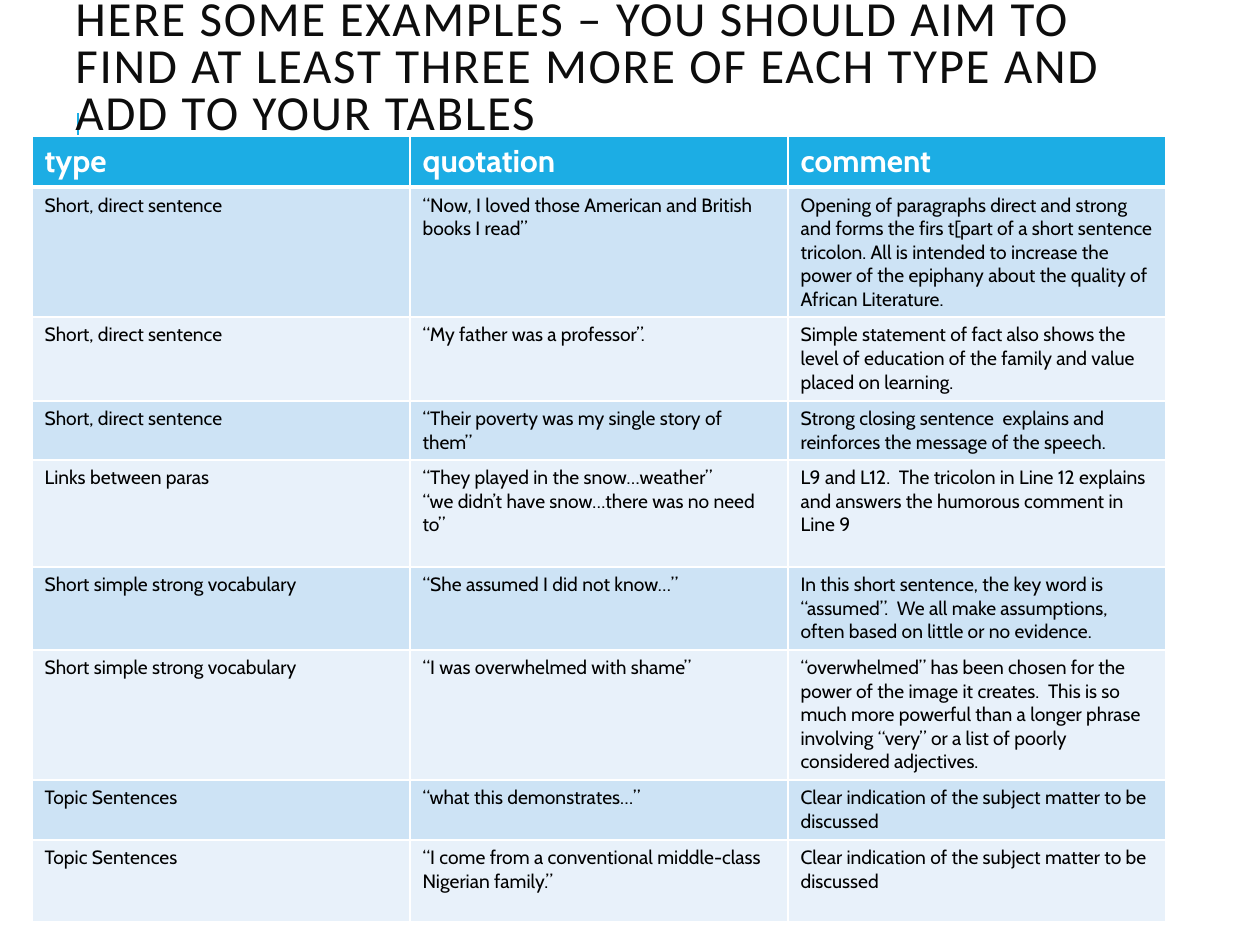
from typing import NamedTuple

from lxml import etree
from pptx import Presentation
from pptx.dml.color import RGBColor
from pptx.enum.shapes import MSO_CONNECTOR
from pptx.enum.text import MSO_ANCHOR
from pptx.oxml.ns import qn
from pptx.util import Emu, Pt

STRAIGHT = MSO_CONNECTOR.STRAIGHT
MIDDLE = MSO_ANCHOR.MIDDLE
TOP = MSO_ANCHOR.TOP
SCALE = 914400 / 126
BLUE, WHITE, BLACK, INK = "1CADE4", "FFFFFF", "000000", "0D0D0D"
BANDS = ("CDE3F5", "E8F1FA")
SIDES = ("L", "R", "T", "B")


class Row(NamedTuple):
    high: int
    kind: str
    quote: str
    note: str


class Style(NamedTuple):
    font: str
    size: int
    color: str
    bold: bool = False


TITLE = Style("Calibri", 28, INK)
HEAD = Style("Cabin", 18, WHITE, True)
BODY = Style("Cabin", 11, BLACK)

ROWS = [
    Row(51, "type", "quotation", "comment"),
    Row(130, "Short, direct sentence",
        "“Now, I loved those American and British books I read”",
        "Opening of paragraphs direct and strong and forms the firs t[part of a short "
        "sentence tricolon. All is intended to increase the power of the epiphany "
        "about the quality of African Literature."),
    Row(84, "Short, direct sentence", "“My father was a professor”.",
        "Simple statement of fact also shows the level of education of the family "
        "and value placed on learning."),
    Row(59, "Short, direct sentence", "“Their poverty was my single story of them”",
        "Strong closing sentence  explains and reinforces the message of the speech."),
    Row(107, "Links between paras",
        "“They played in the snow…weather”\n“we didn’t have snow…there was no need to”",
        "L9 and L12.  The tricolon in Line 12 explains and answers the humorous "
        "comment in Line 9"),
    Row(83, "Short simple strong vocabulary", "“She assumed I did not know…”",
        "In this short sentence, the key word is “assumed”.  We all make assumptions, "
        "often based on little or no evidence."),
    Row(130, "Short simple strong vocabulary", "“I was overwhelmed with shame”",
        "“overwhelmed” has been chosen for the power of the image it creates.  This is "
        "so much more powerful than a longer phrase involving “very” or a list of "
        "poorly considered adjectives."),
    Row(60, "Topic Sentences", "“what this demonstrates…”",
        "Clear indication of the subject matter to be discussed"),
    Row(82, "Topic Sentences",
        "“I come from a conventional middle-class Nigerian family.”",
        "Clear indication of the subject matter to be discussed"),
]


def px(count: int) -> Emu:
    return Emu(round(count * SCALE))


def paint(code: str) -> RGBColor:
    return RGBColor.from_string(code)


def write(frame, text: str, style: Style) -> None:
    frame.text = text
    for para in frame.paragraphs:
        for run in para.runs:
            run.font.name = style.font
            run.font.size = Pt(style.size)
            run.font.bold = style.bold
            run.font.color.rgb = paint(style.color)


def edge(cell, base: int) -> None:
    props = cell._tc.get_or_add_tcPr()
    for spot, side in enumerate(SIDES):
        width = base if side == "B" else 1
        line = etree.Element(qn(f"a:ln{side}"), w=str(Pt(width)))
        fill = etree.SubElement(line, qn("a:solidFill"))
        etree.SubElement(fill, qn("a:srgbClr"), val=WHITE)
        props.insert(spot, line)


def add_rule(slide) -> None:
    rule = slide.shapes.add_connector(STRAIGHT, px(78), px(239), px(78), px(113))
    rule.line.color.rgb = paint(BLUE)
    rule.line.width = Pt(1.5)
    etree.SubElement(rule._element.spPr, qn("a:effectLst"))


def add_title(slide) -> None:
    box = slide.shapes.add_textbox(px(63), px(-10), px(1134), px(158))
    frame = box.text_frame
    frame.word_wrap = True
    frame.vertical_anchor = MIDDLE
    write(frame, "HERE SOME EXAMPLES – YOU SHOULD AIM TO FIND AT LEAST THREE MORE "
          "OF EACH TYPE AND ADD TO YOUR TABLES", TITLE)
    para = frame.paragraphs[0]
    para.line_spacing = 0.8
    para.runs[0].font._element.set("spc", "100")


def add_grid(slide, rows: list[Row]) -> None:
    high = sum(row.high for row in rows)
    grid = slide.shapes.add_table(
        len(rows), 3, px(32), px(136), px(3 * 378), px(high)).table
    for col in grid.columns:
        col.width = px(378)
    for at, row in enumerate(rows):
        grid.rows[at].height = px(row.high)
        for cell, text in zip(grid.rows[at].cells, row[1:]):
            write(cell.text_frame, text, BODY if at else HEAD)
            cell.vertical_anchor = TOP
            cell.fill.solid()
            cell.fill.fore_color.rgb = paint(BANDS[(at - 1) % 2] if at else BLUE)
            edge(cell, 1 if at else 3)
            if at == 1:
                cell._tc.tcPr.find(qn("a:lnT")).set("w", str(Pt(3)))


def main() -> None:
    deck = Presentation()
    deck.slide_width, deck.slide_height = px(1260), px(945)
    slide = deck.slides.add_slide(deck.slide_layouts[6])
    add_rule(slide)
    add_title(slide)
    add_grid(slide, ROWS)
    deck.save("out.pptx")


if __name__ == "__main__":
    main()
